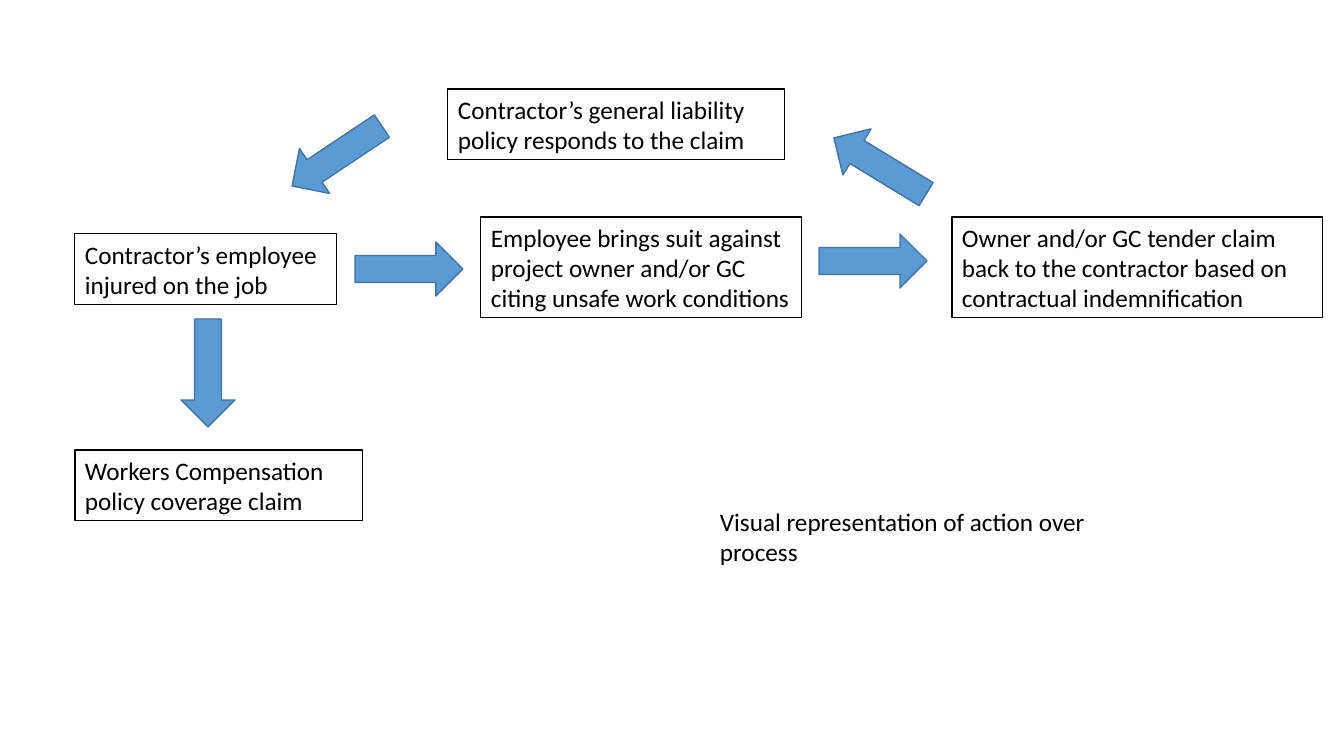
from dataclasses import dataclass

from pptx import Presentation
from pptx import util as u
from pptx.dml.color import RGBColor
from pptx.enum import shapes, text

PX_PER_INCH = 100.8
ARROW_LENGTH, ARROW_WIDTH = 108, 54
LINE_HEIGHT, BOX_PADDING = 30, 11
BLACK, BLUE, DARK_BLUE = "000000", "5B9BD5", "43739E"
FONT = {"name": "Calibri", "size": u.Pt(18)}
FRAME = {
    "word_wrap": True,
    "auto_size": text.MSO_AUTO_SIZE.SHAPE_TO_FIT_TEXT,
    "vertical_anchor": text.MSO_ANCHOR.TOP,
}


@dataclass(frozen=True)
class Step:
    left: int
    top: int
    width: int
    lines: int
    paragraphs: tuple[str, ...]
    outlined: bool = True


@dataclass(frozen=True)
class Arrow:
    left: int
    top: int
    rotation: float = 0
    down: bool = False


STEPS = [
    Step(75, 234, 262, 2, ("Contractor’s employee", "injured on the job")),
    Step(75, 450, 288, 2, ("Workers Compensation policy coverage claim",)),
    Step(481, 217, 321, 3, ("Employee brings suit against project owner and/or GC "
                            "citing unsafe work conditions",)),
    Step(952, 217, 371, 3, ("Owner and/or GC tender claim back to the contractor "
                            "based on contractual indemnification",)),
    Step(448, 89, 337, 2, ("Contractor’s general liability policy responds to the claim",)),
    Step(710, 501, 438, 2, ("Visual representation of action over process",), outlined=False),
]
ARROWS = [
    Arrow(181, 319, down=True),
    Arrow(355, 242),
    Arrow(819, 234),
    Arrow(826, 139, rotation=211.4),
    Arrow(283, 129, rotation=146.3),
]


def px(*lengths: int) -> list[u.Length]:
    return [u.Inches(length / PX_PER_INCH) for length in lengths]


def rgb(value: str) -> RGBColor:
    return RGBColor.from_string(value)


def apply_format(target, values: dict) -> None:
    for name, value in values.items():
        setattr(target, name, value)


def set_line(sp, color: str, points: float) -> None:
    sp.line.color.rgb = rgb(color)
    sp.line.width = u.Pt(points)


def draw_step(s, step: Step) -> None:
    height = step.lines * LINE_HEIGHT + BOX_PADDING
    sp = s.shapes.add_textbox(*px(step.left, step.top, step.width, height))
    if step.outlined:
        set_line(sp, BLACK, 0.75)
    tf = sp.text_frame
    apply_format(tf, FRAME)
    tf.text = "\n".join(step.paragraphs)
    for p in tf.paragraphs:
        for r in p.runs:
            apply_format(r.font, FONT)
            r.font.color.rgb = rgb(BLACK)


def draw_arrow(s, arrow: Arrow) -> None:
    kind, size = shapes.MSO_SHAPE.RIGHT_ARROW, (ARROW_LENGTH, ARROW_WIDTH)
    if arrow.down:
        kind, size = shapes.MSO_SHAPE.DOWN_ARROW, (ARROW_WIDTH, ARROW_LENGTH)
    sp = s.shapes.add_shape(kind, *px(arrow.left, arrow.top, *size))
    sp.rotation = arrow.rotation
    sp.shadow.inherit = False
    sp.fill.solid()
    sp.fill.fore_color.rgb = rgb(BLUE)
    set_line(sp, DARK_BLUE, 1)


def main() -> None:
    prs = Presentation()
    prs.slide_width, prs.slide_height = px(1344, 756)
    s = prs.slides.add_slide(prs.slide_layouts.get_by_name("Blank"))
    for step in STEPS:
        draw_step(s, step)
    for arrow in ARROWS:
        draw_arrow(s, arrow)
    prs.save("out.pptx")


if __name__ == "__main__":
    main()
